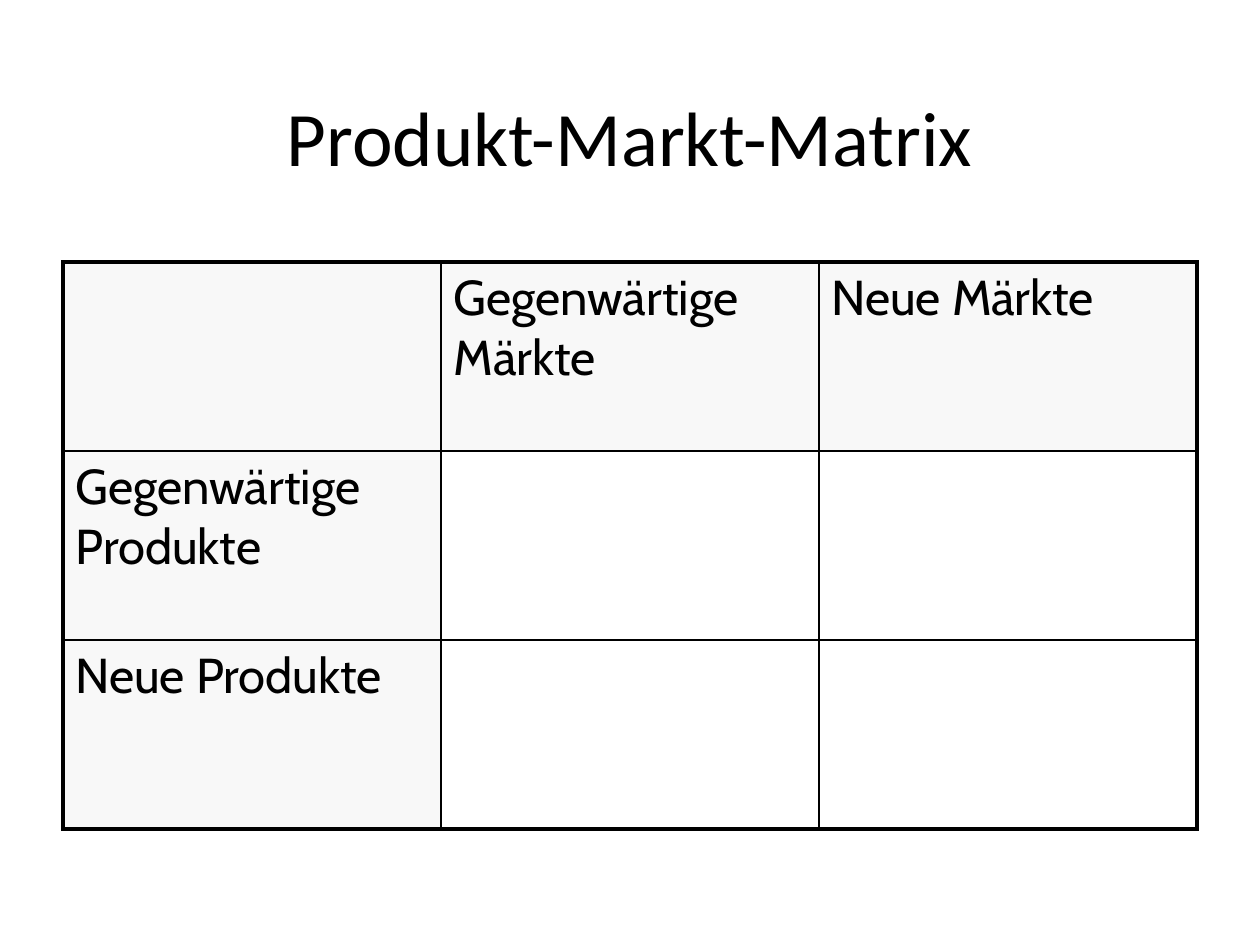
from lxml import etree
from pptx import Presentation
from pptx import util as u
from pptx.dml.color import RGBColor
from pptx.enum import text
from pptx.oxml import ns

WIDTH, HEIGHT = u.Inches(10), u.Inches(7.5)
MARGIN = 0.05
INK, HEADING_FILL = "000000", "F8F8F8"
OUTER, INNER = 2.25, 1
MATRIX = [
    ["", "Gegenwärtige Märkte", "Neue Märkte"],
    ["Gegenwärtige Produkte", "", ""],
    ["Neue Produkte", "", ""],
]


def colour(code):
    """Turn a hex string into a colour."""
    return RGBColor.from_string(code)


def set_font(paragraph, name, size):
    """Set the font of a whole paragraph."""
    paragraph.font.name = name
    paragraph.font.size = u.Pt(size)
    paragraph.font.color.rgb = colour(INK)


def add_title(slide, wording):
    """Add the centred heading above the matrix."""
    title = slide.shapes.add_textbox(
        int(WIDTH * MARGIN), u.Inches(0.32), int(WIDTH * (1 - 2 * MARGIN)), u.Inches(1.51)
    )
    frame = title.text_frame
    frame.word_wrap = True
    frame.vertical_anchor = text.MSO_ANCHOR.MIDDLE
    heading = frame.paragraphs[0]
    heading.text = wording
    heading.alignment = text.PP_ALIGN.CENTER
    set_font(heading, "Calibri", 44)


def add_border(cell, side, points):
    """Draw one side of a cell: L, R, T or B."""
    edge = etree.SubElement(
        cell._tc.get_or_add_tcPr(), ns.qn(f"a:ln{side}"), w=str(u.Pt(points))
    )
    fill = etree.SubElement(edge, ns.qn("a:solidFill"))
    etree.SubElement(fill, ns.qn("a:srgbClr"), val=INK)


def space_before(paragraph, percent):
    """Set the space before a paragraph as a share of its line."""
    spacing = etree.SubElement(paragraph._p.get_or_add_pPr(), ns.qn("a:spcBef"))
    etree.SubElement(spacing, ns.qn("a:spcPct"), val=str(percent * 1000))


def fill_cell(cell, wording, row, column):
    """Write and format one cell by its place in the matrix."""
    last = len(MATRIX) - 1
    on_rim = {"L": column == 0, "R": column == last, "T": row == 0, "B": row == last}
    for side, outer in on_rim.items():
        add_border(cell, side, OUTER if outer else INNER)
    if row == 0 or column == 0:
        cell.fill.solid()
        cell.fill.fore_color.rgb = colour(HEADING_FILL)
    else:
        cell.fill.background()
    label = cell.text_frame.paragraphs[0]
    space_before(label, 20)
    label.text = wording
    set_font(label, "Cabin", 28)


def add_matrix(slide):
    """Add the product and market grid."""
    size = len(MATRIX)
    table = slide.shapes.add_table(
        size, size, int(WIDTH * MARGIN), u.Inches(2.08),
        int(WIDTH * (1 - 2 * MARGIN)), int(HEIGHT * 0.6),
    ).table
    table.first_row = table.horz_banding = False
    for row, labels in enumerate(MATRIX):
        for column, wording in enumerate(labels):
            fill_cell(table.cell(row, column), wording, row, column)


def main():
    """Build the slide and save it."""
    deck = Presentation()
    deck.slide_width, deck.slide_height = WIDTH, HEIGHT
    slide = deck.slides.add_slide(deck.slide_layouts[6])
    add_title(slide, "Produkt-Markt-Matrix")
    add_matrix(slide)
    deck.save("out.pptx")


if __name__ == "__main__":
    main()
